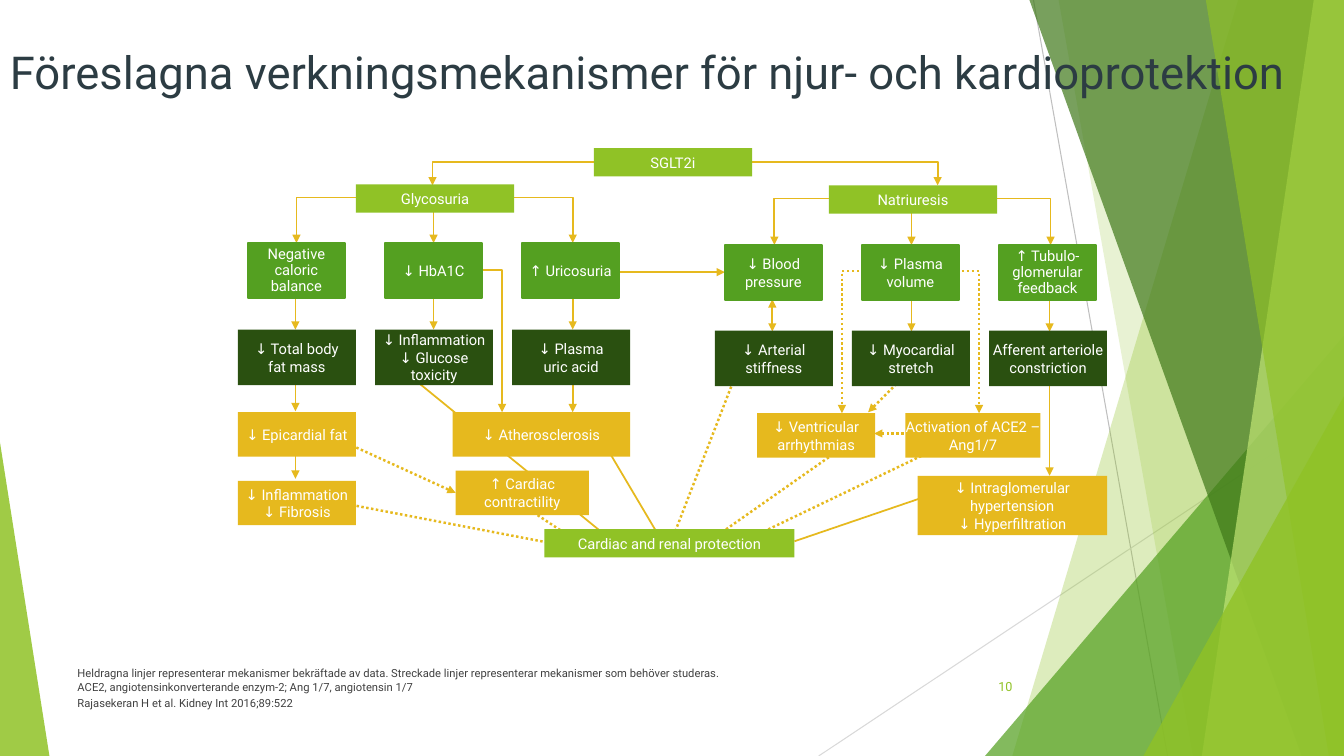
from lxml import etree
from pptx import Presentation
from pptx.dml.color import RGBColor
from pptx.enum import dml, shapes, text
from pptx.oxml.ns import qn
from pptx.util import Inches, Pt

LIME = RGBColor(0x90, 0xC2, 0x26)
GREEN = RGBColor(0x54, 0xA0, 0x21)
FOREST = RGBColor(0x2A, 0x50, 0x10)
MOSS = RGBColor(0x3F, 0x78, 0x19)
PALE = RGBColor(0xC0, 0xE4, 0x74)
GOLD = RGBColor(0xE6, 0xB9, 0x1E)
WHITE = RGBColor(0xFF, 0xFF, 0xFF)
SLATE = RGBColor(0x2C, 0x3C, 0x43)
CHARCOAL = RGBColor(0x40, 0x40, 0x40)
GRAY = RGBColor(0xBF, 0xBF, 0xBF)
LIGHT_GRAY = RGBColor(0xD9, 0xD9, 0xD9)
FONT = "Roboto"

presentation = Presentation()
presentation.slide_width, presentation.slide_height = Inches(13.33), Inches(7.5)
slide = presentation.slides.add_slide(presentation.slide_layouts[6])


def draw_line(points, color, width, dotted=False, ends=()):
    """Straight connector for two points, open outline for more."""
    points = [(Inches(x), Inches(y)) for x, y in points]
    if len(points) == 2:
        shape = slide.shapes.add_connector(
            shapes.MSO_CONNECTOR.STRAIGHT, *points[0], *points[1])
    else:
        builder = slide.shapes.build_freeform(*points[0])
        builder.add_line_segments(points[1:], close=False)
        shape = builder.convert_to_shape()
        shape.fill.background()
    shape.line.color.rgb = color
    shape.line.width = Pt(width)
    if dotted:
        shape.line.dash_style = dml.MSO_LINE.ROUND_DOT
    properties = shape.element.spPr
    outline = properties.find(qn("a:ln"))
    for end in ends:
        etree.SubElement(outline, qn("a:" + end), type="triangle")
    etree.SubElement(properties, qn("a:effectLst"))


def write(shape, words, size, color, align, anchor, inset=0.1, spacing=None):
    frame = shape.text_frame
    frame.word_wrap = True
    frame.margin_left = frame.margin_right = Inches(inset)
    frame.margin_top = frame.margin_bottom = Inches(0.05)
    frame.vertical_anchor = anchor
    frame.text = words
    for paragraph in frame.paragraphs:
        paragraph.alignment = align
        paragraph.line_spacing = spacing
        paragraph.font.name = FONT
        paragraph.font.size = Pt(size)
        paragraph.font.color.rgb = color


# Backdrop: thin lines, then translucent facets (a triangle has left, top, width, height, apex)
draw_line([(10.25, 0), (11.58, 7.5)], GRAY, 0.75)
draw_line([(13.33, 4.03), (8.12, 7.5)], LIGHT_GRAY, 0.75)
facets = [
    ([(12.28, 0), (13.33, 0), (13.33, 7.5), (10.04, 7.5)], LIME, 30),
    ([(10.5, 0), (13.33, 0), (13.33, 7.5), (11.83, 7.5)], LIME, 20),
    ((9.77, 3.33, 3.56, 4.17, 1), GREEN, 72),
    ([(10.21, 0), (13.33, 0), (13.33, 7.5), (12.91, 7.5)], MOSS, 70),
    ([(13.03, 0), (13.33, 0), (13.33, 7.5), (11.92, 7.5)], PALE, 70),
    ([(11.96, 0), (13.33, 0), (13.33, 7.5), (13.18, 7.5)], LIME, 65),
    ((11.34, 3.93, 1.99, 3.57, 1), LIME, 80),
    ((0, 4.39, 0.49, 3.11, 0), LIME, 85),
]
for outline, color, opacity in facets:
    if isinstance(outline, tuple):
        shape = slide.shapes.add_shape(
            shapes.MSO_SHAPE.ISOSCELES_TRIANGLE, *map(Inches, outline[:4]))
        shape.adjustments[0] = outline[4]
    else:
        corners = [(Inches(x), Inches(y)) for x, y in outline]
        builder = slide.shapes.build_freeform(*corners[0])
        builder.add_line_segments(corners[1:])
        shape = builder.convert_to_shape()
    shape.shadow.inherit = False
    shape.line.fill.background()
    shape.fill.solid()
    shape.fill.fore_color.rgb = color
    tint = shape.element.spPr.find(qn("a:solidFill"))[0]
    etree.SubElement(tint, qn("a:alpha"), val=str(opacity * 1000))

# Title, footnotes and page number
LEFT, CENTER, RIGHT = text.PP_ALIGN.LEFT, text.PP_ALIGN.CENTER, text.PP_ALIGN.RIGHT
TOP, MIDDLE, BOTTOM = text.MSO_ANCHOR.TOP, text.MSO_ANCHOR.MIDDLE, text.MSO_ANCHOR.BOTTOM
title = slide.shapes.add_textbox(0, Inches(0.39), Inches(13.33), Inches(1))
write(title, "Föreslagna verkningsmekanismer för njur- och kardioprotektion",
      32.4, SLATE, LEFT, TOP)
notes = slide.shapes.add_textbox(Inches(0.67), Inches(6.56), Inches(10.33), Inches(0.53))
write(notes,
      "Heldragna linjer representerar mekanismer bekräftade av data. "
      "Streckade linjer representerar mekanismer som behöver studeras.\v"
      "ACE2, angiotensinkonverterande enzym-2; Ang 1/7, angiotensin 1/7\n"
      "Rajasekeran H et al. Kidney Int 2016;89:522", 8, CHARCOAL, LEFT, BOTTOM)
for paragraph in notes.text_frame.paragraphs:
    paragraph.space_before = Pt(2)
number = slide.shapes.add_textbox(Inches(9.39), Inches(6.61), Inches(0.75), Inches(0.4))
write(number, "10", 9, LIME, RIGHT, MIDDLE)

# Solid arrows: confirmed mechanisms
solid_arrows = [
    [(6.15, 1.61), (4.29, 1.61), (4.29, 1.84)],
    [(7.44, 1.61), (9.3, 1.61), (9.3, 1.84)],
    [(3.53, 1.96), (2.94, 1.96), (2.94, 2.41)],
    [(5.09, 1.96), (5.68, 1.96), (5.68, 2.41)],
    [(8.27, 1.97), (7.68, 1.97), (7.68, 2.43)],
    [(9.82, 1.97), (10.42, 1.97), (10.42, 2.43)],
    [(4.76, 2.68), (4.98, 2.68), (4.98, 4.09)],
    [(6.14, 2.7), (7.19, 2.7)],
]
drops = [(4.3, 1.94, 2.41), (9.04, 1.96, 2.43), (2.93, 2.8, 3.27), (4.3, 2.8, 3.27),
         (5.68, 2.8, 3.27), (9.04, 2.81, 3.29), (10.41, 2.81, 3.29), (2.93, 3.61, 4.08),
         (5.68, 3.72, 4.09), (2.93, 4.37, 4.75), (10.41, 3.78, 4.72)]
solid_arrows += [[(x, top), (x, bottom)] for x, top, bottom in drops]
for points in solid_arrows:
    draw_line(points, GOLD, 1.25, ends=["tailEnd"])
draw_line([(7.66, 2.97), (7.66, 3.29)], GOLD, 1.25, ends=["headEnd", "tailEnd"])

# Solid lines into the outcome
for points in ([(9.14, 4.94), (7.88, 5.37)], [(4.08, 3.74), (6.14, 5.42)],
               [(6.01, 4.43), (6.62, 5.46)]):
    draw_line(points, GOLD, 1.25)

# Dotted lines and arrows: mechanisms still to be studied
for points in ([(8.3, 4.48), (6.89, 5.47)], [(9.27, 4.46), (7.27, 5.42)],
               [(7.27, 3.79), (6.64, 5.42)], [(5.21, 5.03), (5.77, 5.4)],
               [(3.44, 5), (5.84, 5.46)]):
    draw_line(points, GOLD, 1.75, dotted=True)
for points in ([(9.11, 4.3), (8.67, 4.3)], [(8.96, 3.74), (8.61, 4.09)],
               [(3.49, 4.42), (4.52, 4.89)],
               [(9.49, 2.69), (9.71, 2.69), (9.71, 4.1)],
               [(8.57, 2.69), (8.35, 2.69), (8.35, 4.1)]):
    draw_line(points, GOLD, 1.75, dotted=True, ends=["tailEnd"])

# Boxes: left, top, width, height, fill, words
boxes = [
    (5.89, 1.47, 1.57, 0.28, LIME, "SGLT2i"),
    (3.53, 1.83, 1.57, 0.28, LIME, "Glycosuria"),
    (8.22, 1.84, 1.67, 0.28, LIME, "Natriuresis"),
    (5.4, 5.25, 2.48, 0.28, LIME, "Cardiac and renal protection"),
    (2.36, 4.09, 1.17, 0.44, GOLD, "↓ Epicardial fat"),
    (4.49, 4.09, 1.76, 0.44, GOLD, "↓ Atherosclerosis"),
    (7.51, 4.1, 1.17, 0.44, GOLD, "↓ Ventricular arrhythmias"),
    (8.98, 4.1, 1.34, 0.44, GOLD, "Activation of ACE2 – Ang1/7"),
    (2.36, 4.77, 1.17, 0.44, GOLD, "↓ Inflammation\n↓ Fibrosis"),
    (4.52, 4.67, 1.32, 0.44, GOLD, "↑ Cardiac contractility"),
    (9.1, 4.72, 1.88, 0.59, GOLD, "↓ Intraglomerular hypertension\n↓ Hyperfiltration"),
]
# Each branch has three columns of a green effect above a dark one
branches = [
    (2.94, 2.41, 3.27, [("Negative\vcaloric\vbalance", "↓ Total body\vfat mass"),
                        ("↓ HbA1C", "↓ Inflammation\n↓ Glucose toxicity"),
                        ("↑ Uricosuria", "↓ Plasma\vuric acid")]),
    (7.67, 2.43, 3.28, [("↓ Blood pressure", "↓ Arterial stiffness"),
                        ("↓ Plasma volume", "↓ Myocardial stretch"),
                        ("↑ Tubulo-glomerular\nfeedback", "Afferent arteriole constriction")]),
]
for first_center, green_top, dark_top, columns in branches:
    for index, (effect, consequence) in enumerate(columns):
        center = first_center + 1.36 * index
        boxes.append((center - 0.48, green_top, 0.96, 0.55, GREEN, effect))
        boxes.append((center - 0.58, dark_top, 1.17, 0.55, FOREST, consequence))

for left, top, width, height, color, words in boxes:
    shape = slide.shapes.add_shape(
        shapes.MSO_SHAPE.RECTANGLE, *map(Inches, (left, top, width, height)))
    shape.shadow.inherit = False
    shape.fill.solid()
    shape.fill.fore_color.rgb = color
    if color == GREEN:
        shape.line.color.rgb = GREEN
        shape.line.width = Pt(1.5)
    else:
        shape.line.fill.background()
    tight = words.startswith(("Negative", "↑ Tubulo"))
    write(shape, words, 10.5, WHITE, CENTER, MIDDLE, inset=0, spacing=0.9 if tight else None)

presentation.save("out.pptx")
